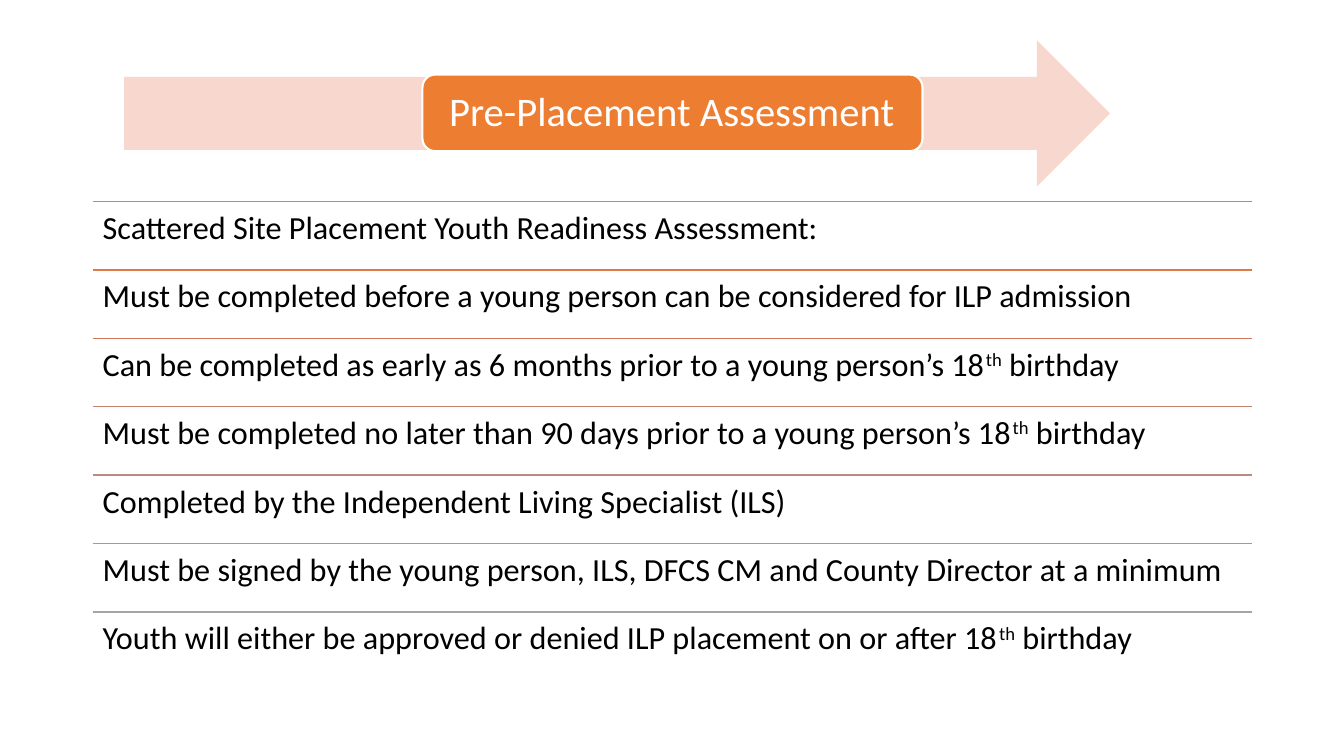
"""Build the pre-placement assessment slide."""
from dataclasses import dataclass

from lxml import etree
from pptx import Presentation
from pptx.dml.color import RGBColor
from pptx.enum.shapes import MSO_CONNECTOR, MSO_SHAPE
from pptx.enum.text import MSO_ANCHOR, MSO_AUTO_SIZE, PP_ALIGN
from pptx.oxml.ns import qn
from pptx.slide import Slide
from pptx.text.text import TextFrame
from pptx.util import Inches, Pt

ARROW, ROUND = MSO_SHAPE.RIGHT_ARROW, MSO_SHAPE.ROUNDED_RECTANGLE
LINE = MSO_CONNECTOR.STRAIGHT
TOP, MIDDLE = MSO_ANCHOR.TOP, MSO_ANCHOR.MIDDLE
LEFT, CENTER = PP_ALIGN.LEFT, PP_ALIGN.CENTER
NO_FIT = MSO_AUTO_SIZE.NONE

ROW_X, ROW_Y, ROW_W = 0.92, 2.0, 11.5
STEP = 4.07 / 6


@dataclass
class Row:
    """One ruled line of the list; dated rows end in a birthday."""

    text: str
    tint: str
    dated: bool = False


@dataclass
class Style:
    """The look of a text frame."""

    size: int
    color: str
    inset: float
    align: PP_ALIGN
    anchor: MSO_ANCHOR


HEAD = Style(29, "FFFFFF", 0.12, CENTER, MIDDLE)
ITEM = Style(23, "000000", 0.1, LEFT, TOP)
ROWS = [
    Row("Scattered Site Placement Youth Readiness Assessment:", "ED7D31"),
    Row("Must be completed before a young person can be considered for ILP admission", "DE7A47"),
    Row("Can be completed as early as 6 months prior to a young person’s 18", "D17B5C", True),
    Row("Must be completed no later than 90 days prior to a young person’s 18", "C48170", True),
    Row("Completed by the Independent Living Specialist (ILS)", "B98A82"),
    Row("Must be signed by the young person, ILS, DFCS CM and County Director at a minimum", "AE9694"),
    Row("Youth will either be approved or denied ILP placement on or after 18", "A5A5A5", True),
]


def rgb(code: str) -> RGBColor:
    """Turn a hex string into a colour."""
    return RGBColor.from_string(code)


def write(frame: TextFrame, text: str, style: Style, dated: bool = False) -> None:
    """Fill a frame with one styled paragraph."""
    frame.word_wrap = True
    frame.auto_size = NO_FIT
    frame.vertical_anchor = style.anchor
    frame.margin_left = frame.margin_right = Inches(style.inset)
    frame.margin_top = frame.margin_bottom = Inches(style.inset)
    para = frame.paragraphs[0]
    para.alignment = style.align
    para.line_spacing = 0.9
    para.font.name = "Calibri"
    para.font.size = Pt(style.size)
    para.font.color.rgb = rgb(style.color)
    para.add_run().text = text
    if dated:
        mark = para.add_run()
        mark.text = "th"
        mark.font.size = Pt(style.size)
        mark.font._element.set("baseline", "30000")
        para.add_run().text = " birthday"


def draw_head(slide: Slide) -> None:
    """Draw the arrow, its label plate and the title."""
    arrow = slide.shapes.add_shape(ARROW, Inches(1.23), Inches(0.4), Inches(9.78), Inches(1.45))
    plate = slide.shapes.add_shape(ROUND, Inches(4.19), Inches(0.74), Inches(4.96), Inches(0.76))
    for shape, tint in ((arrow, "F8D7CE"), (plate, "ED7D31")):
        shape.shadow.inherit = False
        shape.fill.solid()
        shape.fill.fore_color.rgb = rgb(tint)
    arrow.line.fill.background()
    plate.line.color.rgb = rgb("FFFFFF")
    plate.line.width = Pt(1.5)
    title = slide.shapes.title
    title.left, title.top = Inches(4.22), Inches(0.78)
    title.width, title.height = Inches(4.89), Inches(0.68)
    write(title.text_frame, "Pre-Placement Assessment", HEAD)
    plate.element.addnext(title.element)


def draw_row(slide: Slide, row: Row, top: float) -> None:
    """Draw a rule with its text below."""
    left, high = Inches(ROW_X), Inches(top)
    rule = slide.shapes.add_connector(LINE, left, high, Inches(ROW_X + ROW_W), high)
    rule.line.color.rgb = rgb(row.tint)
    rule.line.width = Pt(1)
    etree.SubElement(rule.element.spPr, qn("a:effectLst"))
    box = slide.shapes.add_textbox(left, high, Inches(ROW_W), Inches(STEP))
    write(box.text_frame, row.text, ITEM, row.dated)


def main() -> None:
    """Build and save the slide."""
    deck = Presentation()
    deck.slide_width, deck.slide_height = Inches(13.33), Inches(7.5)
    slide = deck.slides.add_slide(deck.slide_layouts[5])
    draw_head(slide)
    for num, row in enumerate(ROWS):
        draw_row(slide, row, ROW_Y + num * STEP)
    deck.save("out.pptx")


if __name__ == "__main__":
    main()
